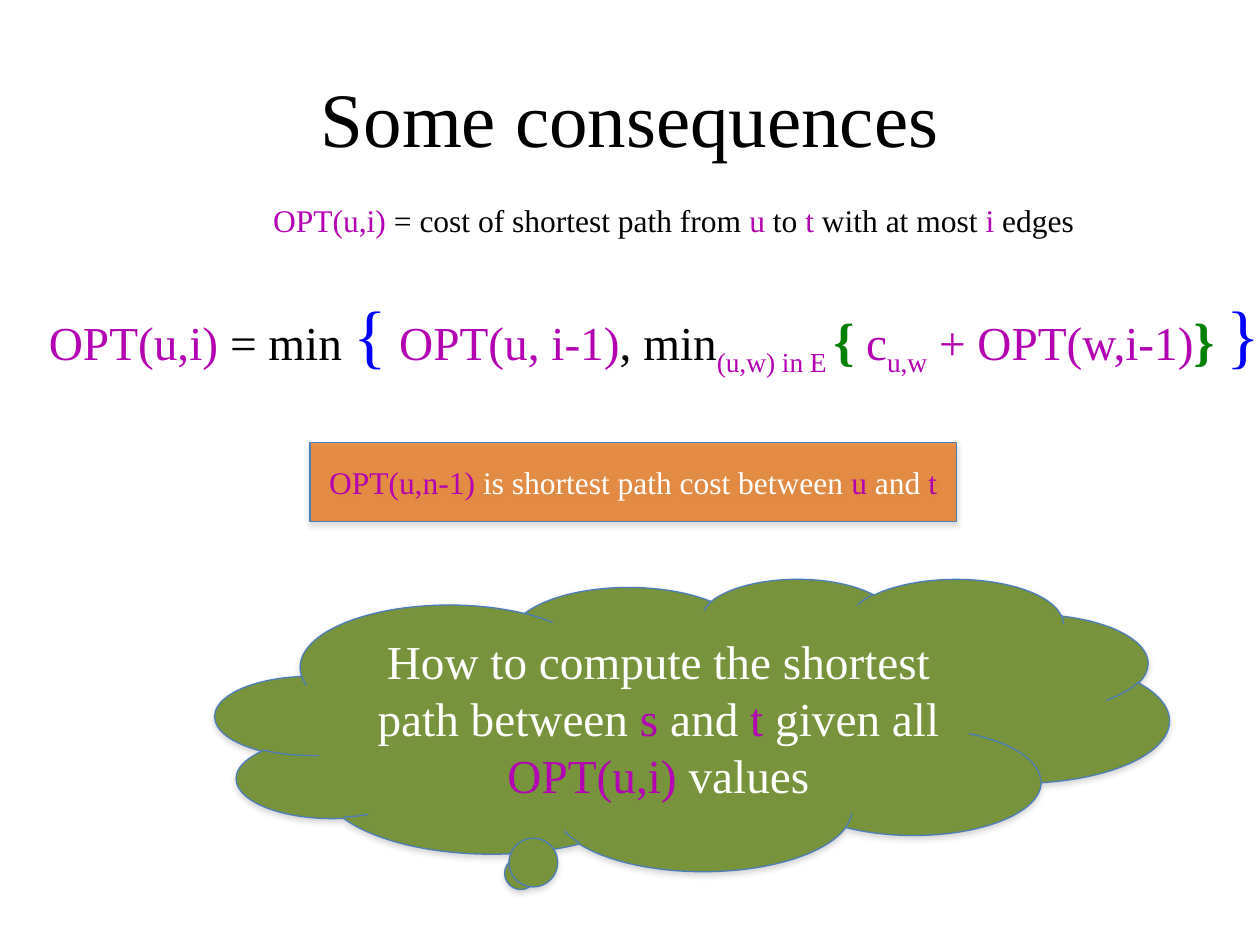
from lxml.etree import SubElement
from pptx import Presentation
from pptx.dml.color import RGBColor
from pptx.enum.shapes import MSO_SHAPE as Shape
from pptx.enum.text import MSO_ANCHOR as Anchor, MSO_AUTO_SIZE as AutoSize, PP_ALIGN as Align
from pptx.oxml.ns import qn
from pptx.util import Emu, Pt

PX = 9144
FONT = "Times New Roman"
COLORS = {
    "black": "000000",
    "white": "FFFFFF",
    "purple": "B200B2",
    "blue": "0000FF",
    "green": "008000",
    "orange": "E46C0A",
    "olive": "77933C",
    "outline": "4A7EBB",
    "shadow": "808080",
}


def color(name):
    """Return the named colour."""
    return RGBColor.from_string(COLORS[name])


def scaled(box):
    """Turn a px box into EMU."""
    return [Emu(length * PX) for length in box]


def write_spans(para, spans, size):
    """Add (text, colour, options) spans to a paragraph."""
    for text, shade, *options in spans:
        extra = options[0] if options else {}
        span = para.add_run()
        span.text = text
        span.font.name = FONT
        span.font.size = Pt(extra.get("size", size))
        span.font.bold = extra.get("bold", False)
        span.font.color.rgb = color(shade)
        if extra.get("subscript"):
            span.font._element.set("baseline", "-25000")


def add_title(page, box, text):
    """Place the centred title."""
    frame = page.shapes.add_textbox(*scaled(box)).text_frame
    frame.word_wrap = True
    frame.vertical_anchor = Anchor.MIDDLE
    para = frame.paragraphs[0]
    para.alignment = Align.CENTER
    write_spans(para, [(text, "black")], 44)


def add_line(page, box, spans, size):
    """Place one unwrapped line of coloured text."""
    frame = page.shapes.add_textbox(*scaled(box)).text_frame
    frame.word_wrap = False
    frame.auto_size = AutoSize.SHAPE_TO_FIT_TEXT
    write_spans(frame.paragraphs[0], spans, size)


def add_soft_shadow(shape):
    """Give a shape a soft grey shadow below it."""
    shape.shadow.inherit = False
    effects = shape._element.spPr.find(qn("a:effectLst"))
    shadow = SubElement(effects, qn("a:outerShdw"), blurRad="40000", dist="23000",
                        dir="5400000", rotWithShape="0")
    shade = SubElement(shadow, qn("a:srgbClr"), val=COLORS["shadow"])
    SubElement(shade, qn("a:alpha"), val="35000")


def add_callout(page, kind, box, fill, spans, size, opacity=100, adjustments=()):
    """Place a filled, shadowed shape with centred text."""
    shape = page.shapes.add_shape(kind, *scaled(box))
    for index, value in enumerate(adjustments):
        shape.adjustments[index] = value
    add_soft_shadow(shape)
    shape.fill.solid()
    shape.fill.fore_color.rgb = color(fill)
    if opacity < 100:
        shade = shape._element.spPr.find(qn("a:solidFill"))[0]
        SubElement(shade, qn("a:alpha"), val=str(opacity * 1000))
    shape.line.color.rgb = color("outline")
    shape.line.width = Pt(0.75)
    frame = shape.text_frame
    frame.word_wrap = True
    frame.vertical_anchor = Anchor.MIDDLE
    para = frame.paragraphs[0]
    para.alignment = Align.CENTER
    write_spans(para, spans, size)


def main():
    """Build the slide and save it."""
    deck = Presentation()
    deck.slide_width, deck.slide_height = scaled((1000, 750))
    page = deck.slides.add_slide(deck.slide_layouts[6])

    add_title(page, (50, 30, 900, 125), "Some consequences")

    definition = [
        ("OPT(u,i) ", "purple"),
        ("= cost of shortest path from ", "black"),
        ("u", "purple"),
        (" to ", "black"),
        ("t", "purple"),
        (" with at most ", "black"),
        ("i", "purple"),
        (" edges", "black"),
    ]
    add_line(page, (207, 155, 660, 40), definition, 18)

    outer = {"size": 40}
    inner = {"size": 30, "bold": True}
    subscript = {"subscript": True}
    recurrence = [
        ("OPT(u,i)", "purple"),
        (" = min ", "black"),
        ("{", "blue", outer),
        (" ", "black"),
        ("OPT(u, i-1)", "purple"),
        (", min", "black"),
        ("(u,w) in E ", "purple", subscript),
        ("{", "green", inner),
        (" ", "black"),
        ("c", "purple"),
        ("u,w", "purple", subscript),
        (" + OPT(w,i-1)", "purple"),
        ("}", "green", inner),
        (" ", "black"),
        ("}", "blue", outer),
    ]
    add_line(page, (29, 226, 987, 77), recurrence, 27)

    result = [
        ("OPT(u,n-1) ", "purple"),
        ("is shortest path cost between ", "white"),
        ("u", "purple"),
        (" and ", "white"),
        ("t", "purple"),
    ]
    add_callout(page, Shape.RECTANGLE, (246, 351, 513, 63), "orange", result, 18, opacity=72)

    question = [
        ("How to compute the shortest path between ", "white"),
        ("s", "purple"),
        (" and ", "white"),
        ("t", "purple"),
        (" given all ", "white"),
        ("OPT(u,i) ", "purple"),
        ("values", "white"),
    ]
    add_callout(page, Shape.CLOUD_CALLOUT, (171, 459, 757, 232), "olive", question, 27,
                adjustments=(-0.18, 0.51))

    deck.save("out.pptx")


if __name__ == "__main__":
    main()
